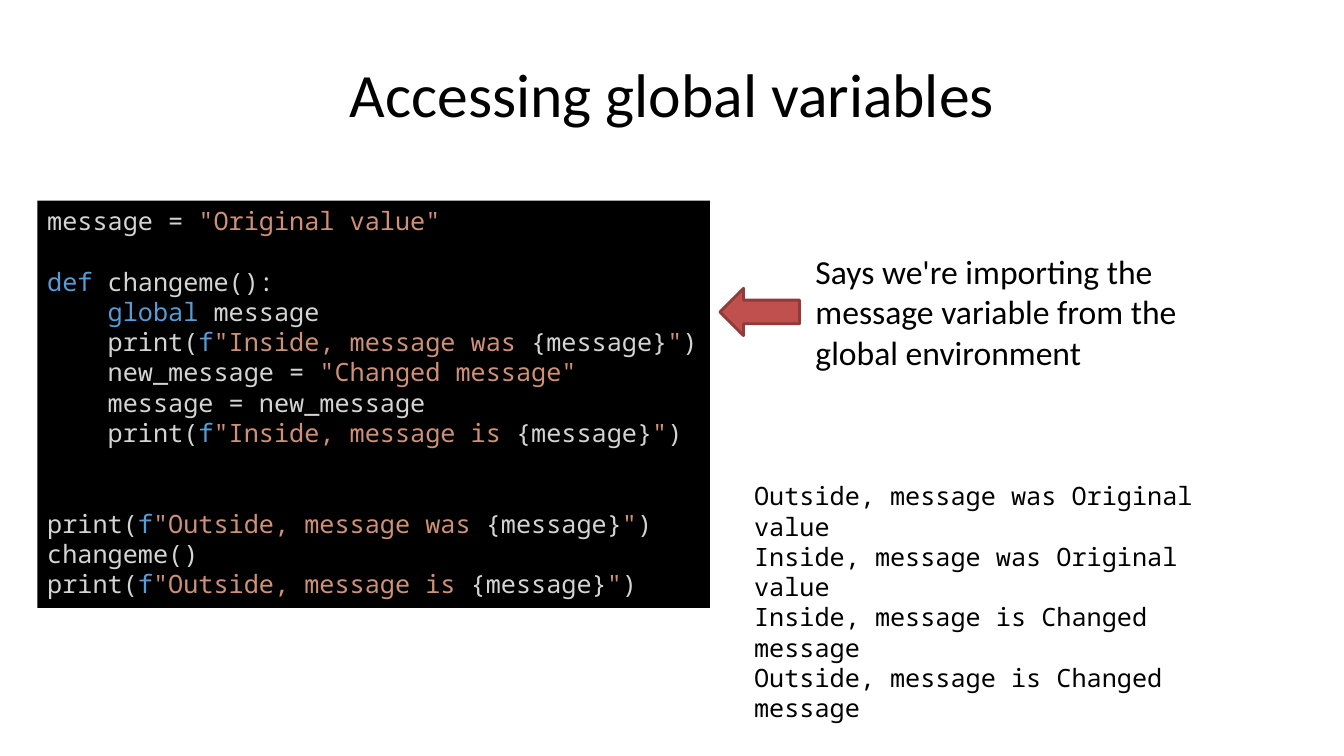
from dataclasses import dataclass
from typing import NamedTuple, Optional

from pptx import Presentation
from pptx.dml.color import RGBColor
from pptx.enum import shapes, text
from pptx.util import Inches, Pt


# Theme
@dataclass(frozen=True)
class Theme:
    body_font: str = "Calibri"
    code_font: str = "Noto Sans Mono"
    title_size: int = 44
    note_size: int = 24
    code_size: int = 18
    code_pitch: float = 21.6
    code_indent: float = 0.6
    ink: str = "000000"
    plain: str = "D4D4D4"
    string: str = "CE9178"
    keyword: str = "569CD6"
    arrow_fill: str = "C0504D"
    arrow_line: str = "8E3B39"


THEME = Theme()


class Span(NamedTuple):
    wording: str
    color: str = THEME.ink


class Line(NamedTuple):
    spans: list[Span]
    level: int = 0
    gap: int = 0


@dataclass(frozen=True)
class Panel:
    left: float
    top: float
    width: float
    height: float
    lines: list[Line]
    font: str
    size: int
    fill: Optional[str] = None


# Code wording
def plain(wording: str) -> Span:
    return Span(wording, THEME.plain)


def string(wording: str) -> Span:
    return Span(wording, THEME.string)


def keyword(wording: str) -> Span:
    return Span(wording, THEME.keyword)


def print_call(label: str) -> list[Span]:
    return [plain("print("), keyword("f"), string(f'"{label} '),
            plain("{message}"), string('"'), plain(")")]


CODE = [
    Line([plain("message = "), string('"Original value"')]),
    Line([keyword("def"), plain(" changeme():")], gap=1),
    Line([keyword("global"), plain(" message")], level=1),
    Line(print_call("Inside, message was"), level=1),
    Line([plain("new_message = "), string('"Changed message"')], level=1),
    Line([plain("message = new_message")], level=1),
    Line(print_call("Inside, message is"), level=1),
    Line(print_call("Outside, message was"), gap=2),
    Line([plain("changeme()")]),
    Line(print_call("Outside, message is")),
]
OUTPUT = [Line([Span(wording)]) for wording in (
    "Outside, message was Original value",
    "Inside, message was Original value",
    "Inside, message is Changed message",
    "Outside, message is Changed message",
)]
NOTE = [Line([Span("Says we're importing the message variable from the global environment")])]

PANELS = [
    Panel(0.37, 1.99, 6.67, 4.04, CODE, THEME.code_font, THEME.code_size, THEME.ink),
    Panel(7.38, 4.72, 5.12, 1.31, OUTPUT, THEME.code_font, THEME.code_size),
    Panel(7.99, 2.44, 4.5, 1.31, NOTE, THEME.body_font, THEME.note_size),
]


# Drawing
def write(frame, lines: list[Line], *, font: str, size: int,
          align=text.PP_ALIGN.LEFT, anchor=text.MSO_ANCHOR.TOP) -> None:
    frame.word_wrap = True
    frame.vertical_anchor = anchor
    for number, line in enumerate(lines):
        paragraph = frame.add_paragraph() if number else frame.paragraphs[0]
        paragraph.alignment = align
        if line.gap:
            paragraph.space_before = Pt(line.gap * THEME.code_pitch)
        if line.level:
            properties = paragraph._p.get_or_add_pPr()
            properties.set("marL", str(Inches(line.level * THEME.code_indent)))
            properties.set("indent", "0")
        for span in line.spans:
            run = paragraph.add_run()
            run.text = span.wording
            run.font.name = font
            run.font.size = Pt(size)
            run.font.color.rgb = RGBColor.from_string(span.color)


def draw_panel(slide, panel: Panel) -> None:
    box = slide.shapes.add_textbox(Inches(panel.left), Inches(panel.top),
                                   Inches(panel.width), Inches(panel.height))
    if panel.fill:
        box.fill.solid()
        box.fill.fore_color.rgb = RGBColor.from_string(panel.fill)
    write(box.text_frame, panel.lines, font=panel.font, size=panel.size)
    box.text_frame.auto_size = text.MSO_AUTO_SIZE.SHAPE_TO_FIT_TEXT


def draw_title(slide, wording: str) -> None:
    title = slide.shapes.title
    title.left, title.top = Inches(0.67), Inches(0.3)
    title.width, title.height = Inches(12), Inches(1.25)
    write(title.text_frame, [Line([Span(wording)])], font=THEME.body_font,
          size=THEME.title_size, align=text.PP_ALIGN.CENTER,
          anchor=text.MSO_ANCHOR.MIDDLE)


def draw_arrow(slide) -> None:
    arrow = slide.shapes.add_shape(shapes.MSO_SHAPE.RIGHT_ARROW, Inches(7.14),
                                   Inches(2.86), Inches(0.79), Inches(0.47))
    arrow.rotation = 180
    arrow.shadow.inherit = False
    arrow.fill.solid()
    arrow.fill.fore_color.rgb = RGBColor.from_string(THEME.arrow_fill)
    arrow.line.color.rgb = RGBColor.from_string(THEME.arrow_line)
    arrow.line.width = Pt(2)


def main() -> None:
    deck = Presentation()
    deck.slide_width, deck.slide_height = Inches(13.33), Inches(7.5)
    slide = deck.slides.add_slide(deck.slide_layouts[5])

    draw_title(slide, "Accessing global variables")
    for panel in PANELS:
        draw_panel(slide, panel)
    # Arrow from the note to the global statement
    draw_arrow(slide)
    deck.save("out.pptx")


if __name__ == "__main__":
    main()
